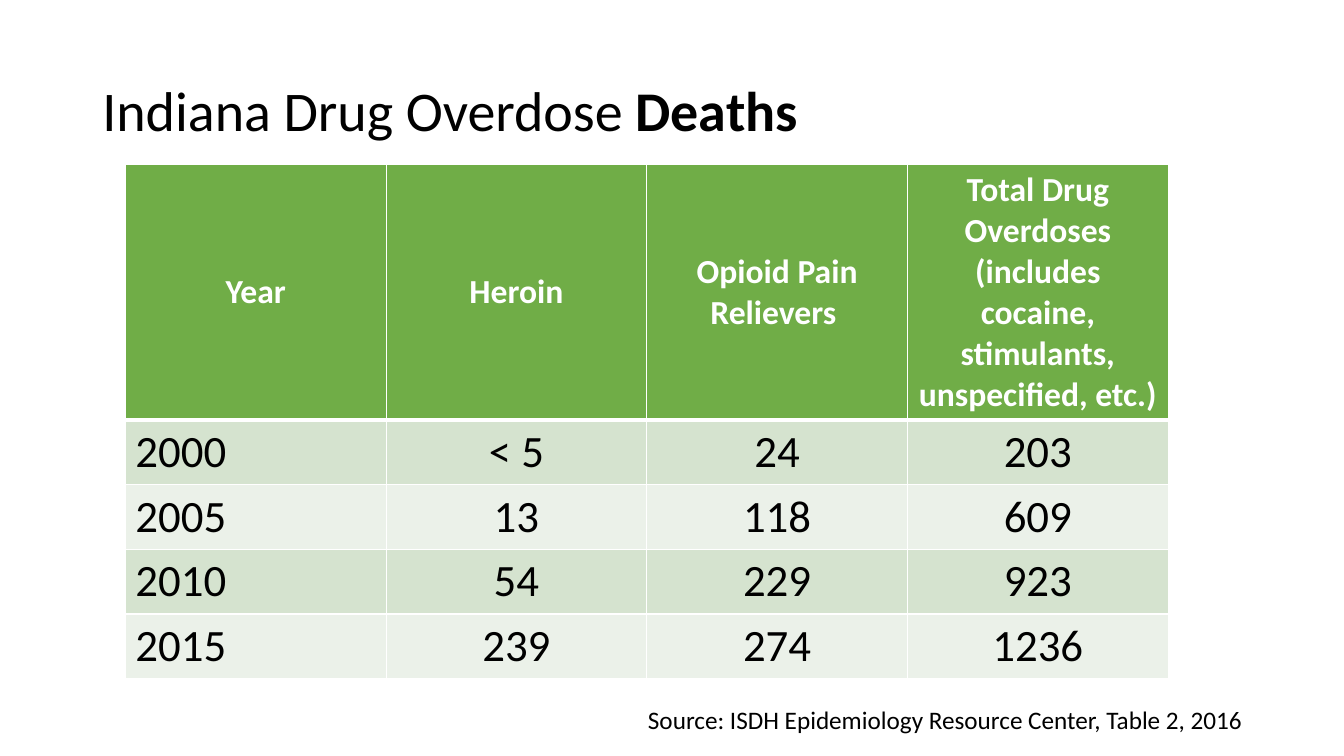
from lxml import etree
from pptx import Presentation
from pptx.dml.color import RGBColor
from pptx.enum import text
from pptx.oxml import ns
from pptx.util import Cm, Pt

FONT = "Calibri"
BLACK, WHITE, GREEN = "000000", "FFFFFF", "70AD47"
BANDS = ["D5E3CF", "EBF1E9"]
LEFT, CENTER = text.PP_ALIGN.LEFT, text.PP_ALIGN.CENTER
TOP, MIDDLE = text.MSO_ANCHOR.TOP, text.MSO_ANCHOR.MIDDLE

ROWS = [
    ["Year", "Heroin", "Opioid Pain Relievers ",
     "Total Drug Overdoses (includes cocaine, stimulants, unspecified, etc.)"],
    ["2000", "< 5", "24", "203"],
    ["2005", "13", "118", "609"],
    ["2010", "54", "229", "923"],
    ["2015", "239", "274", "1236"],
]


def rgb(value):
    return RGBColor.from_string(value)


def add_run(p, content, size=18, color=BLACK, bold=False):
    r = p.add_run()
    r.text = content
    r.font.name = FONT
    r.font.size = Pt(size)
    r.font.bold = bold
    r.font.color.rgb = rgb(color)


def add_text(s, left, top, width, height, anchor=TOP):
    tf = s.shapes.add_textbox(Cm(left), Cm(top), Cm(width), Cm(height)).text_frame
    tf.word_wrap = True
    tf.vertical_anchor = anchor
    return tf.paragraphs[0]


def set_borders(cell, color, bottom):
    tcPr = cell._tc.get_or_add_tcPr()
    for side, width in (("L", 1), ("R", 1), ("T", 1), ("B", bottom)):
        ln = etree.SubElement(tcPr, ns.qn(f"a:ln{side}"), w=str(Pt(width)))
        fill = etree.SubElement(ln, ns.qn("a:solidFill"))
        etree.SubElement(fill, ns.qn("a:srgbClr"), val=color)


def fill_cell(cell, content, fill, align=CENTER, anchor=MIDDLE, bottom=1, **fmt):
    set_borders(cell, WHITE, bottom)
    cell.fill.solid()
    cell.fill.fore_color.rgb = rgb(fill)
    cell.vertical_anchor = anchor
    p = cell.text_frame.paragraphs[0]
    p.alignment = align
    add_run(p, content, **fmt)


def add_deaths_table(s):
    header_height, row_height = 6.43, 1.63
    height = header_height + row_height * (len(ROWS) - 1)
    table = s.shapes.add_table(len(ROWS), len(ROWS[0]), Cm(3.16), Cm(4.15),
                               Cm(26.28), Cm(height)).table
    for i, values in enumerate(ROWS):
        table.rows[i].height = Cm(row_height if i else header_height)
        for j, value in enumerate(values):
            cell = table.cell(i, j)
            if i == 0:
                fill_cell(cell, value, GREEN, bottom=3, size=24, color=WHITE, bold=True)
            else:
                fill_cell(cell, value, BANDS[(i - 1) % 2], size=32,
                          align=CENTER if j else LEFT, anchor=MIDDLE if j else TOP)


def main():
    prs = Presentation()
    prs.slide_width, prs.slide_height = Cm(33.87), Cm(19.05)
    s = prs.slides.add_slide(prs.slide_layouts[6])

    # Title
    p = add_text(s, 2.33, 1.01, 29.21, 3.68, anchor=MIDDLE)
    p.line_spacing = 0.9
    add_run(p, "Indiana Drug Overdose ", size=40)
    add_run(p, "Deaths", size=40, bold=True)

    # Table of deaths by year
    add_deaths_table(s)

    # Source line
    p = add_text(s, 16.08, 17.63, 16, 1.03)
    add_run(p, "Source: ISDH Epidemiology Resource Center, Table 2, 2016")

    prs.save("out.pptx")


if __name__ == "__main__":
    main()
